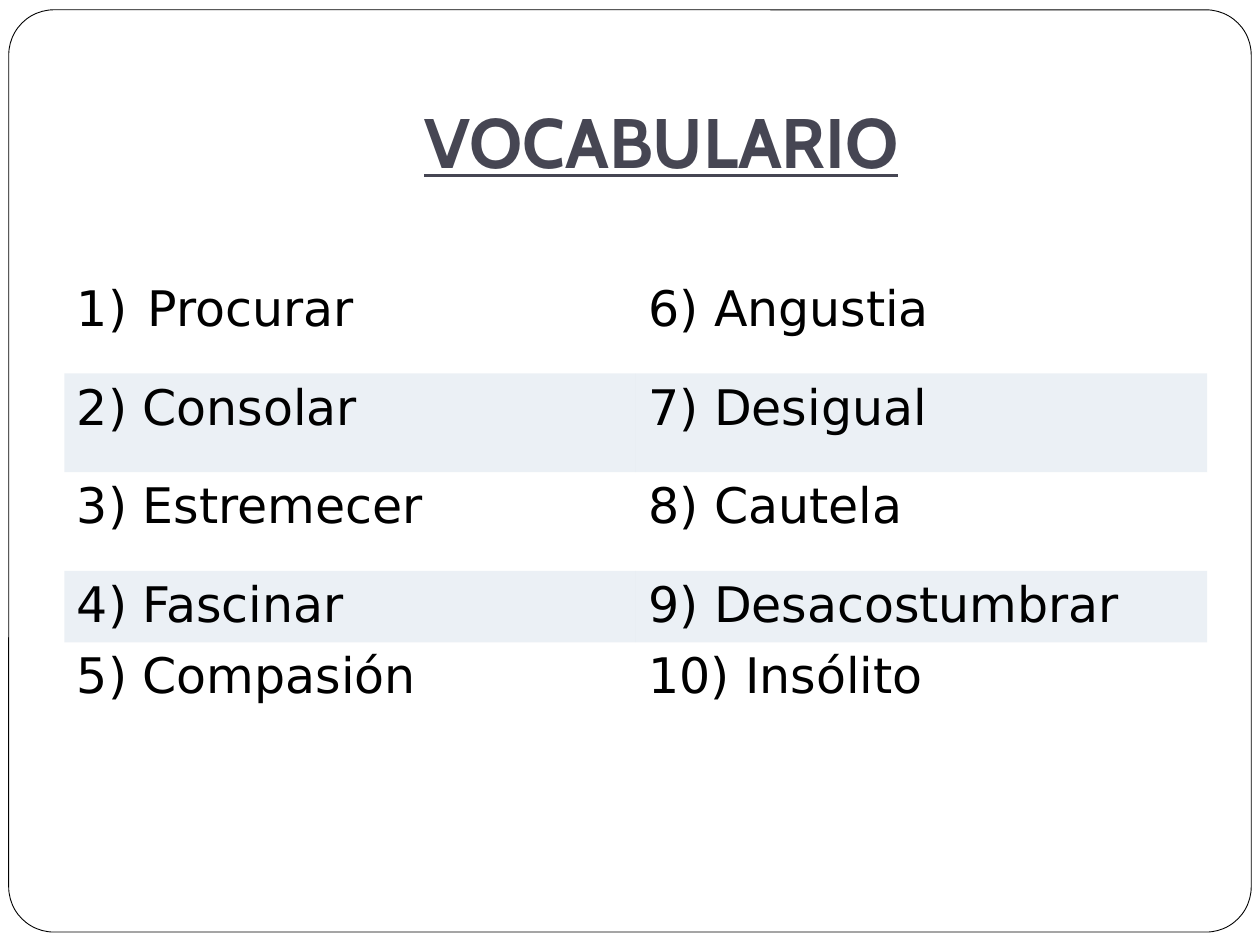
from dataclasses import dataclass

import pptx
import pptx.dml.color
import pptx.enum.shapes
import pptx.enum.text
import pptx.oxml.ns
import pptx.util
from lxml import etree

Pt = pptx.util.Pt
COLORS = {"paper": "FFFFFF", "frame": "000000", "title": "464653",
          "word": "000000", "band": "9FB8CD"}
BAND_OPACITY = 20
PLAIN_TABLE_STYLE = "{2D5ABB26-0587-4C30-8999-92F81FD0307C}"
NUMBER_INDENT = 40.5


@dataclass
class VocabularyRow:
    left: str
    right: str
    height: float = 56.4
    auto_numbered: bool = False


ROWS = [
    VocabularyRow("Procurar", "6) Angustia", auto_numbered=True),
    VocabularyRow("2) Consolar", "7) Desigual"),
    VocabularyRow("3) Estremecer", "8) Cautela"),
    VocabularyRow("4) Fascinar", "9) Desacostumbrar", height=32.4),
    VocabularyRow("5) Compasión", "10) Insólito"),
]


def rgb(name: str) -> pptx.dml.color.RGBColor:
    return pptx.dml.color.RGBColor.from_string(COLORS[name])


def add_span(para, text: str, font: str, size: float, color: str):
    span = para.add_run()
    span.text = text
    span.font.name = font
    span.font.size = Pt(size)
    span.font.color.rgb = rgb(color)
    return span


def add_frame(page) -> None:
    frame = page.shapes.add_shape(
        pptx.enum.shapes.MSO_SHAPE.ROUNDED_RECTANGLE,
        Pt(5), Pt(5.6), Pt(710), Pt(527))
    frame.adjustments[0] = 0.049
    frame.shadow.inherit = False
    frame.fill.solid()
    frame.fill.fore_color.rgb = rgb("paper")
    frame.line.color.rgb = rgb("frame")
    frame.line.width = Pt(0.5)


def add_title(page) -> None:
    box = page.shapes.add_textbox(Pt(72), Pt(21.6), Pt(612), Pt(90))
    text = box.text_frame
    text.word_wrap = True
    text.vertical_anchor = pptx.enum.text.MSO_ANCHOR.BOTTOM
    text.margin_bottom = Pt(7.2)
    para = text.paragraphs[0]
    para.alignment = pptx.enum.text.PP_ALIGN.CENTER
    span = add_span(para, "VOCABULARIO", "Cabin", 40, "title")
    span.font.bold = True
    span.font.underline = True


def fill_band(cell) -> None:
    """Tint a cell with the translucent band colour."""
    cell.fill.solid()
    cell.fill.fore_color.rgb = rgb("band")
    color = cell._tc.tcPr.find(".//" + pptx.oxml.ns.qn("a:srgbClr"))
    alpha = etree.SubElement(color, pptx.oxml.ns.qn("a:alpha"))
    alpha.set("val", str(BAND_OPACITY * 1000))


def number_paragraph(para) -> None:
    """Give a paragraph an automatic "1)" number with a hanging indent."""
    properties = para._p.get_or_add_pPr()
    properties.set("marL", str(Pt(NUMBER_INDENT)))
    properties.set("indent", str(-Pt(NUMBER_INDENT)))
    number = etree.SubElement(properties, pptx.oxml.ns.qn("a:buAutoNum"))
    number.set("type", "arabicParenR")


def add_vocabulary(page, rows: list[VocabularyRow]) -> None:
    frame = page.shapes.add_table(
        len(rows), 2, Pt(36.8), Pt(157), Pt(653),
        Pt(sum(row.height for row in rows)))
    table = frame.table
    table.first_row = False
    table.horz_banding = False
    table._tbl.tblPr.find(pptx.oxml.ns.qn("a:tableStyleId")).text = PLAIN_TABLE_STYLE
    for index, row in enumerate(rows):
        table.rows[index].height = Pt(row.height)
        for column, word in enumerate((row.left, row.right)):
            cell = table.cell(index, column)
            if index % 2:
                fill_band(cell)
            else:
                cell.fill.background()
            para = cell.text_frame.paragraphs[0]
            para.alignment = pptx.enum.text.PP_ALIGN.JUSTIFY
            if row.auto_numbered and column == 0:
                number_paragraph(para)
            add_span(para, word, "DejaVu Sans", 28, "word")


def main() -> None:
    deck = pptx.Presentation()
    deck.slide_width, deck.slide_height = Pt(720), Pt(540)
    page = deck.slides.add_slide(deck.slide_layouts[6])
    add_frame(page)
    add_title(page)
    add_vocabulary(page, ROWS)
    deck.save("out.pptx")


if __name__ == "__main__":
    main()
